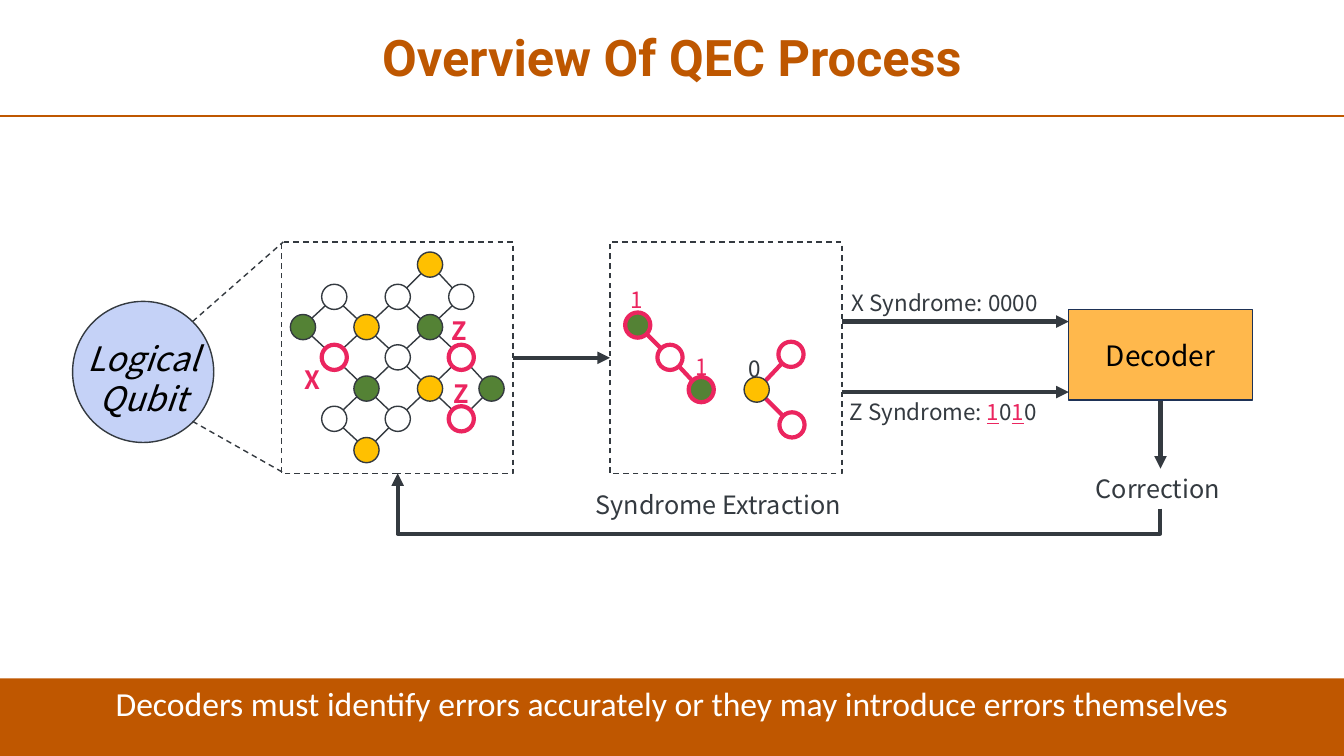
from math import copysign
from pptx import Presentation
from pptx.dml.color import RGBColor
from pptx.enum.dml import MSO_LINE
from pptx.enum.shapes import MSO_CONNECTOR, MSO_SHAPE
from pptx.enum.text import MSO_ANCHOR, MSO_AUTO_SIZE, PP_ALIGN
from pptx.oxml.ns import qn
from pptx.util import Inches, Pt
from lxml import etree

RECT, OVAL = MSO_SHAPE.RECTANGLE, MSO_SHAPE.OVAL
STRAIGHT, ELBOW = MSO_CONNECTOR.STRAIGHT, MSO_CONNECTOR.ELBOW
DASH = MSO_LINE.DASH
TOP, MIDDLE = MSO_ANCHOR.TOP, MSO_ANCHOR.MIDDLE
LEFT, CENTER = PP_ALIGN.LEFT, PP_ALIGN.CENTER
FIT = MSO_AUTO_SIZE.SHAPE_TO_FIT_TEXT
RGB = RGBColor.from_string
INK, PINK, WHITE, BLACK = "343A40", "EB255F", "FFFFFF", "000000"
GREEN, YELLOW, ORANGE = "548235", "FFC000", "BF5700"
NOTO = "Noto Sans CJK JP"
NODE = 0.25

prs = Presentation()
prs.slide_width, prs.slide_height = Inches(13.33), Inches(7.5)
s = prs.slides.add_slide(prs.slide_layouts[6])


def add_shape(kind, x, y, w, h, fill=None, line=INK, width=1, dash=None):
    sp = s.shapes.add_shape(kind, Inches(x), Inches(y), Inches(w), Inches(h))
    sp.shadow.inherit = False
    if fill:
        sp.fill.solid()
        sp.fill.fore_color.rgb = RGB(fill)
    else:
        sp.fill.background()
    if line:
        sp.line.color.rgb = RGB(line)
        sp.line.width = Pt(width)
        sp.line.dash_style = dash
    else:
        sp.line.fill.background()
    return sp


def add_line(x1, y1, x2, y2, color=INK, width=1, dash=None, arrow=False, kind=STRAIGHT):
    c = s.shapes.add_connector(kind, Inches(x1), Inches(y1), Inches(x2), Inches(y2))
    c.line.color.rgb = RGB(color)
    c.line.width = Pt(width)
    c.line.dash_style = dash
    pr = c._element.spPr
    if arrow:
        etree.SubElement(pr.find(qn("a:ln")), qn("a:tailEnd"), type="triangle")
    etree.SubElement(pr, qn("a:effectLst"))
    return c


title = s.shapes.add_textbox(Inches(0.09), Inches(0.04), Inches(13.15), Inches(1.11))
add_line(0, 1.15, 13.33, 1.15, ORANGE, 1.5)
footer = add_shape(RECT, 0, 6.73, 13.33, 0.8, ORANGE, None)

for x in (2.79, 6.05):
    add_shape(RECT, x, 2.4, 2.3, 2.3, dash=DASH)
add_shape(OVAL, 0.72, 2.99, 1.4, 1.4, "C5D2F7")
add_line(1.91, 3.19, 2.81, 2.4, dash=DASH)
add_line(1.91, 4.18, 2.83, 4.7, dash=DASH)
decoder = add_shape(RECT, 10.6, 3.07, 1.82, 0.9, "FFB84C", "1E3256")

cols = [2.88, 3.19, 3.51, 3.82, 4.14, 4.45, 4.75]
rows = [2.5, 2.82, 3.12, 3.42, 3.73, 4.03, 4.34]
checks = {(0, 2): GREEN, (4, 2): GREEN, (2, 4): GREEN, (6, 4): GREEN,
          (2, 2): YELLOW, (4, 4): YELLOW, (2, 6): YELLOW, (4, 0): YELLOW}
errors = [(1, 3), (5, 3), (5, 5)]
data = [(c, r) for c in (1, 3, 5) for r in (1, 3, 5)]

edges = []
for c, r in checks:
    if c in (2, 4) and r in (2, 4):
        pairs = [((c - 1, r - 1), (c + 1, r + 1)), ((c - 1, r + 1), (c + 1, r - 1))]
    else:
        near = [(c + i, r + j) for i in (-1, 1) for j in (-1, 1)]
        pairs = [((c, r), n) for n in near if n in data]
    for (c1, r1), (c2, r2) in pairs:
        edges.append(((cols[c1], rows[r1]), (cols[c2], rows[r2]), INK, 1))

green_1, data_1, green_2 = (6.2, 3.1), (6.52, 3.42), (6.83, 3.74)
yellow, data_2, data_3 = (7.38, 3.74), (7.72, 3.39), (7.73, 4.09)
for start, end in ((green_1, data_1), (data_1, green_2), (yellow, data_2), (yellow, data_3)):
    edges.append((start, end, PINK, 3))

rim = 0.09
for (x1, y1), (x2, y2), color, width in edges:
    dx, dy = copysign(rim, x2 - x1), copysign(rim, y2 - y1)
    half = NODE / 2
    add_line(x1 + half + dx, y1 + half + dy, x2 + half - dx, y2 + half - dy, color, width)

nodes = [(cols[c], rows[r], fill, INK, 1) for (c, r), fill in checks.items()]
for c, r in data:
    outline = (PINK, 3) if (c, r) in errors else (INK, 1)
    nodes.append((cols[c], rows[r], WHITE, *outline))
for spot, fill in ((green_1, GREEN), (data_1, WHITE), (green_2, GREEN),
                   (data_2, WHITE), (data_3, WHITE)):
    nodes.append((*spot, fill, PINK, 3))
nodes.append((*yellow, YELLOW, INK, 1))
for x, y, fill, line, width in nodes:
    add_shape(OVAL, x, y, NODE, NODE, fill, line, width)

for x1, y1, x2, y2 in ((5.09, 3.55, 6.05, 3.55), (8.35, 3.19, 10.6, 3.19),
                       (8.35, 3.89, 10.6, 3.89), (11.51, 3.98, 11.51, 4.65)):
    add_line(x1, y1, x2, y2, width=3, arrow=True)

feedback = add_line(7.9, 1.09, 7.55, 8.65, width=3, arrow=True, kind=ELBOW)
pr = feedback._element.spPr
pr.find(qn("a:xfrm")).set("rot", "5400000")
geom = pr.find(qn("a:prstGeom"))
for av in geom.findall(qn("a:avLst")):
    geom.remove(av)
av = etree.SubElement(geom, qn("a:avLst"))
etree.SubElement(av, qn("a:gd"), name="adj1", fmla="val -71500")

heading = {"name": "Roboto", "size": Pt(36), "bold": True}
banner = {"name": "Calibri", "size": Pt(24)}
qubit = {"name": NOTO, "size": Pt(24), "italic": True}
box = {"name": NOTO, "size": Pt(20)}
error = {"name": NOTO, "size": Pt(18), "bold": True}
caption = {"name": NOTO, "size": Pt(18)}
small = {"name": NOTO, "size": Pt(16)}

texts = [
    (title, [[("Overview Of QEC Process", "BE5700")]], heading, CENTER, MIDDLE),
    (footer, [[("Decoders must identify errors accurately or they may introduce errors themselves", WHITE)]],
     banner, CENTER, TOP),
    (decoder, [[("Decoder", BLACK)]], box, CENTER, MIDDLE),
]
labels = [
    (0.76, 3.3, 1.32, 0.91, [[("Logical", BLACK)], [("Qubit", BLACK)]], qubit, CENTER),
    (2.92, 3.57, 0.39, 0.4, [[("X", PINK)]], error, LEFT),
    (4.38, 3.08, 0.37, 0.4, [[("Z", PINK)]], error, LEFT),
    (4.4, 3.7, 0.37, 0.4, [[("Z", PINK)]], error, LEFT),
    (5.81, 4.81, 2.77, 0.4, [[("Syndrome Extraction", INK)]], caption, LEFT),
    (10.77, 4.65, 1.47, 0.4, [[("Correction", INK)]], caption, LEFT),
    (8.35, 2.82, 2.28, 0.37, [[("X Syndrome: 0000", INK)]], small, LEFT),
    (8.33, 3.9, 2.27, 0.37,
     [[("Z Syndrome: ", INK), ("1", PINK), ("0", INK), ("1", PINK), ("0", INK)]], small, LEFT),
    (6.16, 2.79, 0.34, 0.37, [[("1", PINK)]], small, LEFT),
    (6.8, 3.45, 0.34, 0.37, [[("1", PINK)]], small, LEFT),
    (7.33, 3.47, 0.34, 0.37, [[("0", INK)]], small, LEFT),
]
for x, y, w, h, paragraphs, fmt, align in labels:
    sp = s.shapes.add_textbox(Inches(x), Inches(y), Inches(w), Inches(h))
    sp.text_frame.auto_size = FIT
    texts.append((sp, paragraphs, fmt, align, TOP))

for sp, paragraphs, fmt, align, anchor in texts:
    tf = sp.text_frame
    tf.word_wrap = tf.auto_size != FIT
    tf.vertical_anchor = anchor
    for i, runs in enumerate(paragraphs):
        p = tf.add_paragraph() if i else tf.paragraphs[0]
        p.alignment = align
        for text, color in runs:
            r = p.add_run()
            r.text = text
            for key, value in fmt.items():
                setattr(r.font, key, value)
            r.font.color.rgb = RGB(color)
            if len(runs) > 1 and color == PINK:
                r.font.underline = True
title.text_frame.paragraphs[0].line_spacing = 0.9

prs.save("out.pptx")
